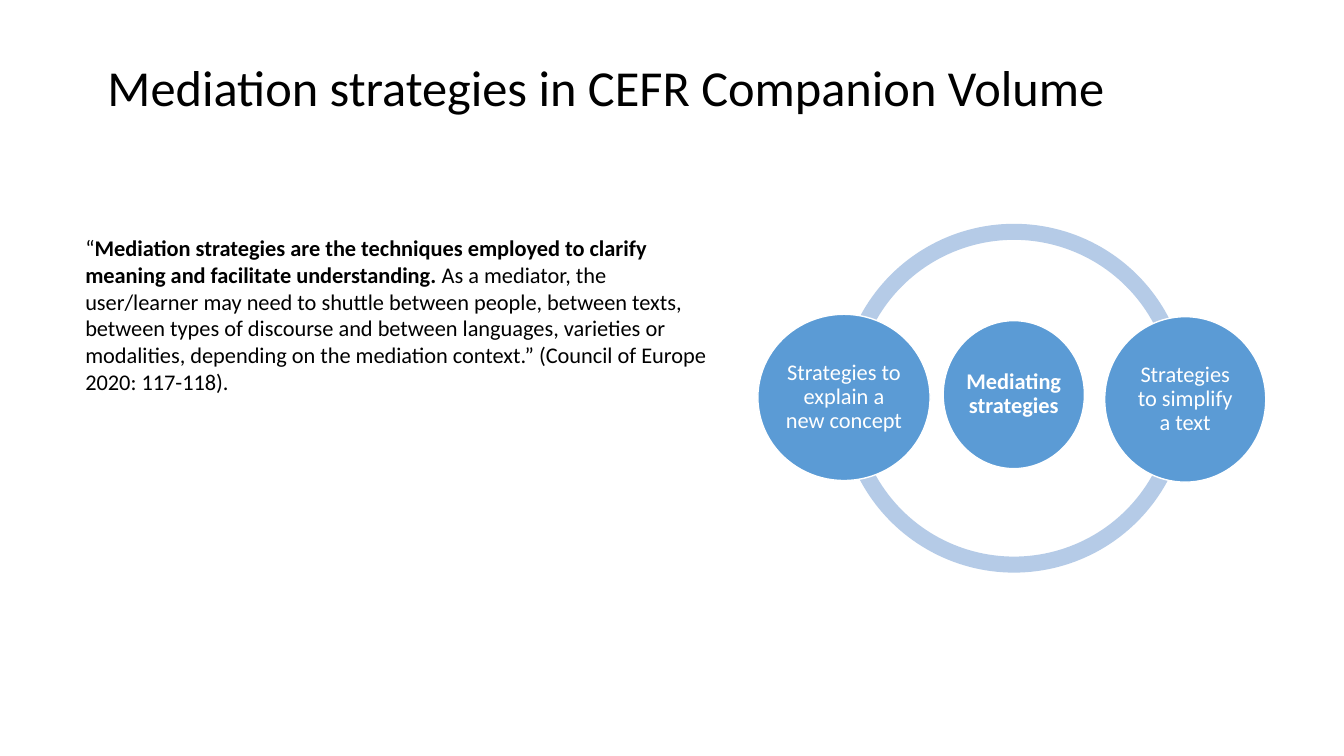
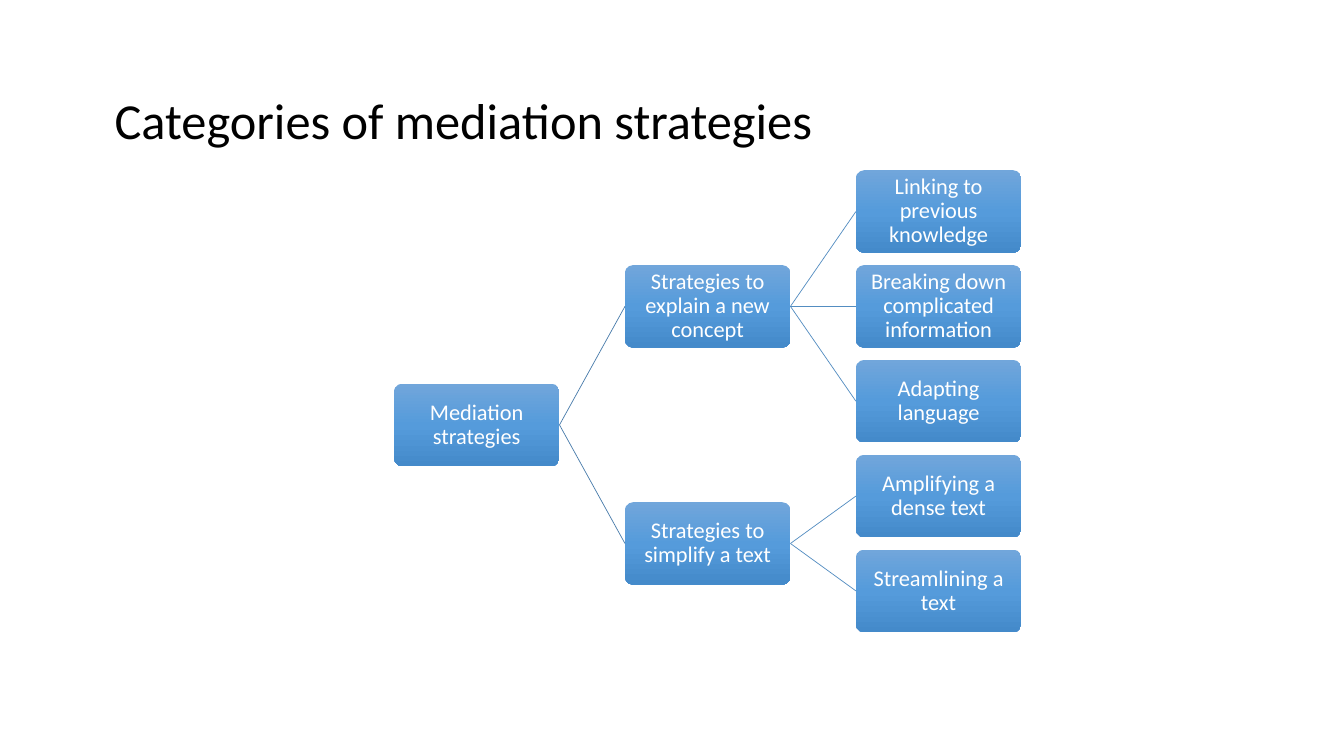
from copy import deepcopy

from lxml import etree
from pptx import Presentation
from pptx import util as u
from pptx.dml.color import RGBColor
from pptx.enum import shapes, text
from pptx.oxml.ns import qn

BLACK = RGBColor(0x00, 0x00, 0x00)
WHITE = RGBColor(0xFF, 0xFF, 0xFF)
BLUE = RGBColor(0x5B, 0x9B, 0xD5)
PALE_BLUE = RGBColor(0xB5, 0xCB, 0xE7)
ROOT_LINE = RGBColor(0x49, 0x7C, 0xAB)
BRANCH_LINE = RGBColor(0x53, 0x8D, 0xC1)
BOX_GRADIENT = [
    (0, RGBColor(0x71, 0xA6, 0xDB)),
    (0.5, RGBColor(0x55, 0x9B, 0xDB)),
    (1, RGBColor(0x44, 0x8A, 0xCA)),
]

# Tree grid, in centimetres
TREE_LEFT, TREE_TOP = 9.93, 4.29
BOX_WIDTH, BOX_HEIGHT = 4.17, 2.08
COLUMN_STEP, ROW_STEP = 5.82, 2.39
LEFT_SITE, RIGHT_SITE = 1, 3


class Deck:
    """Holds the shared style and the current slide."""

    title_format = {"name": "Calibri", "size": u.Pt(36)}
    body_format = {"name": "Calibri", "size": u.Pt(16)}

    def __init__(self):
        self.presentation = Presentation()
        self.presentation.slide_width = u.Cm(33.87)
        self.presentation.slide_height = u.Cm(19.05)
        self.slide = None

    def new_slide(self):
        self.slide = self.presentation.slides.add_slide(
            self.presentation.slide_layouts[6])

    def add_text(self, paragraph, wording, style, color, bold=False):
        run = paragraph.add_run()
        run.text = wording
        for name, value in {**style, "bold": bold}.items():
            setattr(run.font, name, value)
        run.font.color.rgb = color

    def text_box(self, left, top, width, height):
        box = self.slide.shapes.add_textbox(*map(u.Cm, (left, top, width, height)))
        box.text_frame.word_wrap = True
        return box.text_frame

    def title(self, wording, left, top, height):
        frame = self.text_box(left, top, 27, height)
        frame.vertical_anchor = text.MSO_ANCHOR.BOTTOM
        frame.paragraphs[0].line_spacing = 0.9
        self.add_text(frame.paragraphs[0], wording, self.title_format, BLACK)

    def body(self, runs, left, top, width, height):
        paragraph = self.text_box(left, top, width, height).paragraphs[0]
        for wording, bold in runs:
            self.add_text(paragraph, wording, self.body_format, BLACK, bold)

    def shape(self, kind, left, top, width, height, adjustment=None):
        shape = self.slide.shapes.add_shape(
            kind, *map(u.Cm, (left, top, width, height)))
        shape.shadow.inherit = False
        shape.line.fill.background()
        if adjustment is not None:
            shape.adjustments[0] = adjustment
        return shape

    def label(self, shape, wording, margin, bold=False):
        frame = shape.text_frame
        frame_format = {"word_wrap": True, "vertical_anchor": text.MSO_ANCHOR.MIDDLE}
        for side in ("left", "top", "right", "bottom"):
            frame_format[f"margin_{side}"] = u.Cm(margin)
        for name, value in frame_format.items():
            setattr(frame, name, value)
        paragraph = frame.paragraphs[0]
        paragraph.alignment = text.PP_ALIGN.CENTER
        paragraph.line_spacing = 0.9
        self.add_text(paragraph, wording, self.body_format, WHITE, bold)

    def ring(self, left, top, size):
        ring = self.shape(shapes.MSO_SHAPE.DONUT, left, top, size, size, 0.046)
        ring.fill.solid()
        ring.fill.fore_color.rgb = PALE_BLUE

    def circle(self, wording, left, top, width, height, bold=False):
        circle = self.shape(shapes.MSO_SHAPE.OVAL, left, top, width, height)
        circle.fill.solid()
        circle.fill.fore_color.rgb = BLUE
        circle.line.color.rgb = WHITE
        circle.line.width = u.Pt(1)
        self.label(circle, wording, 0.05, bold)

    def tree_box(self, wording, column, row):
        box = self.shape(
            shapes.MSO_SHAPE.ROUNDED_RECTANGLE,
            TREE_LEFT + column * COLUMN_STEP, TREE_TOP + row * ROW_STEP,
            BOX_WIDTH, BOX_HEIGHT, 0.1)
        box.fill.gradient()
        box.fill.gradient_angle = 270
        # The default gradient has two stops; add a middle one
        stop_list = box.element.spPr.find(".//" + qn("a:gsLst"))
        stop_list.insert(1, deepcopy(stop_list[0]))
        for stop, (position, color) in zip(box.fill.gradient_stops, BOX_GRADIENT):
            stop.position = position
            stop.color.rgb = color
        self.label(box, wording, 0.03)
        return box

    def branch(self, parent, child, color):
        line = self.slide.shapes.add_connector(
            shapes.MSO_CONNECTOR.STRAIGHT, 0, 0, 0, 0)
        line.begin_connect(parent, RIGHT_SITE)
        line.end_connect(child, LEFT_SITE)
        line.line.color.rgb = color
        line.line.width = u.Pt(0.5)
        etree.SubElement(line.element.spPr, qn("a:effectLst"))


def definition_slide(deck):
    deck.new_slide()
    deck.title("Mediation strategies in CEFR Companion Volume", 2.46, 0.79, 2.29)

    # Quotation
    deck.body([
        ("“", False),
        ("Mediation strategies are the techniques employed to clarify meaning "
         "and facilitate understanding. ", True),
        ("As a mediator, the user/learner may need to shuttle between people, "
         "between texts, between types of discourse and between languages, "
         "varieties or modalities, depending on the mediation context.” "
         "(Council of Europe 2020: 117-118).", False),
    ], 1.9, 5.77, 16.33, 7.5)

    # Ring with three circles
    deck.ring(21.16, 5.64, 8.79)
    deck.circle("Mediating strategies", 23.77, 8.08, 3.56, 3.73, bold=True)
    deck.circle("Strategies to explain a new concept", 19.1, 7.92, 4.34, 4.19)
    deck.circle("Strategies to simplify a text", 27.84, 7.98, 4.06, 4.17)


def categories_slide(deck):
    deck.new_slide()
    deck.title("Categories of mediation strategies", 2.64, 1.17, 2.74)

    # Each parent sits halfway between its first and last child
    categories = {
        "Strategies to explain a new concept": [
            "Linking to previous knowledge",
            "Breaking down complicated information",
            "Adapting language",
        ],
        "Strategies to simplify a text": [
            "Amplifying a dense text",
            "Streamlining a text",
        ],
    }
    first_row = 0
    category_rows = []
    for strategies in categories.values():
        category_rows.append(first_row + (len(strategies) - 1) / 2)
        first_row += len(strategies)

    root = deck.tree_box("Mediation strategies", 0, sum(category_rows) / 2)
    leaf_row = 0
    for (category, strategies), row in zip(categories.items(), category_rows):
        category_box = deck.tree_box(category, 1, row)
        deck.branch(root, category_box, ROOT_LINE)
        for strategy in strategies:
            leaf = deck.tree_box(strategy, 2, leaf_row)
            deck.branch(category_box, leaf, BRANCH_LINE)
            leaf_row += 1


def main():
    deck = Deck()
    definition_slide(deck)
    categories_slide(deck)
    deck.presentation.save("out.pptx")


if __name__ == "__main__":
    main()
